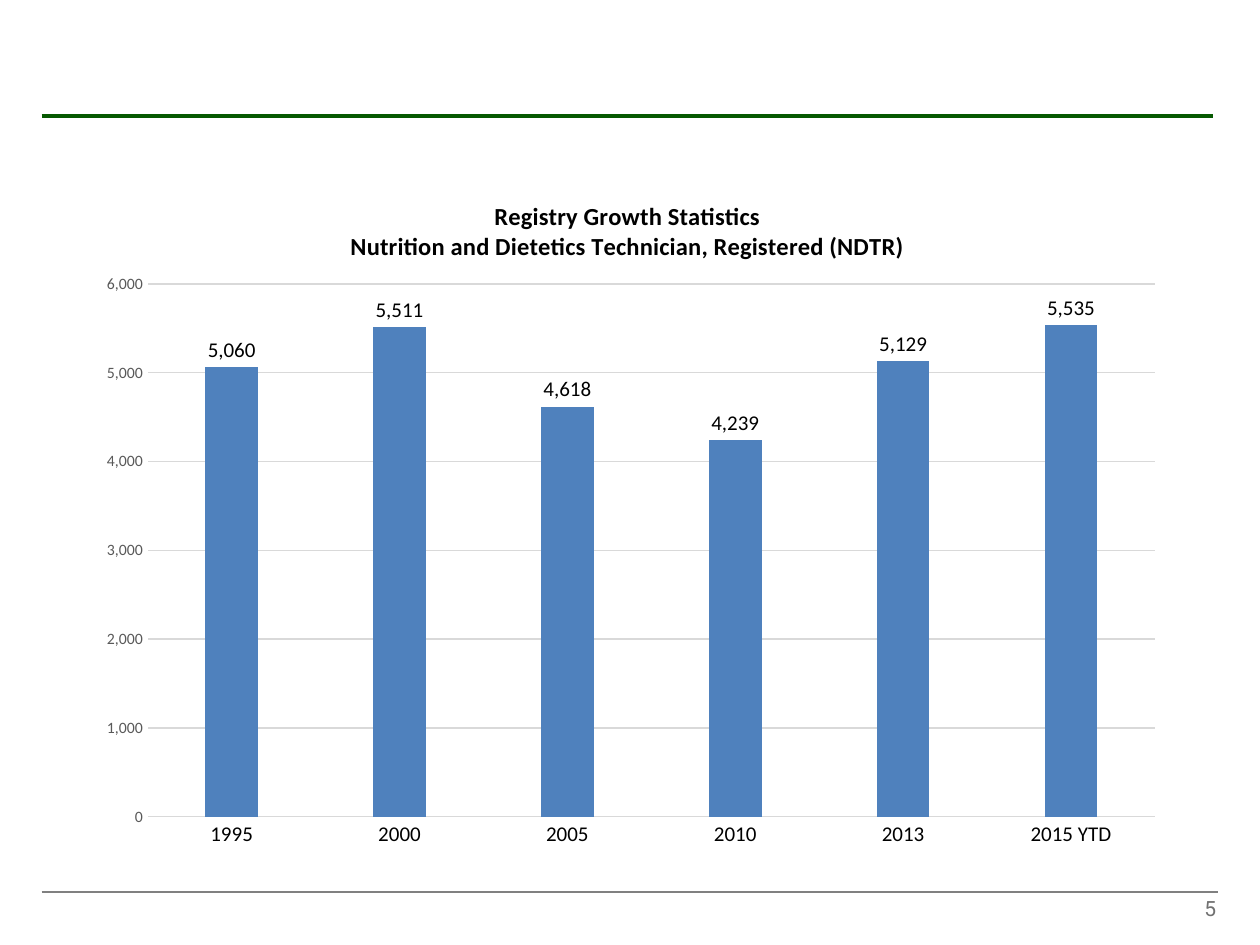
from lxml import etree
from pptx import Presentation
from pptx.chart.data import CategoryChartData
from pptx.dml.color import RGBColor
from pptx.enum.chart import XL_CHART_TYPE, XL_LABEL_POSITION, XL_TICK_MARK
from pptx.enum.shapes import MSO_CONNECTOR
from pptx.enum.text import MSO_ANCHOR, PP_ALIGN
from pptx.oxml.ns import qn
from pptx.util import Inches, Pt

COLUMNS = XL_CHART_TYPE.COLUMN_CLUSTERED
OUTSIDE_END = XL_LABEL_POSITION.OUTSIDE_END
NO_TICK = XL_TICK_MARK.NONE
STRAIGHT = MSO_CONNECTOR.STRAIGHT
MIDDLE = MSO_ANCHOR.MIDDLE
RIGHT = PP_ALIGN.RIGHT

HEADING = ["Registry Growth Statistics",
           "Nutrition and Dietetics Technician, Registered (NDTR)"]
REGISTRY = {"1995": 5060, "2000": 5511, "2005": 4618,
            "2010": 4239, "2013": 5129, "2015 YTD": 5535}


def color(hex_value):
    return RGBColor.from_string(hex_value)


def set_font(font, size, hex_value, name="Calibri", bold=False):
    font.name = name
    font.size = Pt(size)
    font.bold = bold
    font.color.rgb = color(hex_value)


def set_line(line, hex_value, width):
    line.color.rgb = color(hex_value)
    line.width = Pt(width)


def add_rule(slide, left, top, width, hex_value, weight):
    rule = slide.shapes.add_connector(
        STRAIGHT, Inches(left), Inches(top), Inches(left + width), Inches(top))
    set_line(rule.line, hex_value, weight)
    etree.SubElement(rule._element.spPr, qn("a:effectLst"))


def add_page_number(slide, left, top, width, height, number):
    box = slide.shapes.add_textbox(
        Inches(left), Inches(top), Inches(width), Inches(height))
    frame = box.text_frame
    frame.word_wrap = True
    frame.vertical_anchor = MIDDLE
    paragraph = frame.paragraphs[0]
    paragraph.text = number
    paragraph.alignment = RIGHT
    set_font(paragraph.font, 12, "717171", "Roboto")


def set_layout(parent, position, **settings):
    for old in parent.findall(qn("c:layout")):
        parent.remove(old)
    layout = etree.Element(qn("c:layout"))
    manual = etree.SubElement(layout, qn("c:manualLayout"))
    for tag, value in settings.items():
        etree.SubElement(manual, qn(f"c:{tag}")).set("val", str(value))
    parent.insert(position, layout)


def add_heading(chart):
    chart.has_title = True
    frame = chart.chart_title.text_frame
    frame.text = "\n".join(HEADING)
    for paragraph in frame.paragraphs:
        set_font(paragraph.font, 14, "000000", bold=True)
    set_layout(chart.chart_title._element, 1,
               xMode="edge", yMode="edge", x=0.24, y=0.04)


def format_axes(chart):
    years = chart.category_axis
    years.major_tick_mark = NO_TICK
    set_font(years.tick_labels.font, 12, "000000")
    set_line(years.format.line, "D9D9D9", 0.75)

    counts = chart.value_axis
    counts.minimum_scale, counts.maximum_scale = 0, 6000
    counts.major_unit = 1000
    counts.major_tick_mark = NO_TICK
    counts.format.line.fill.background()
    set_line(counts.major_gridlines.format.line, "D9D9D9", 0.75)
    set_font(counts.tick_labels.font, 9, "595959")
    counts.tick_labels.number_format = "#,##0"
    counts.tick_labels.number_format_is_linked = False


def format_columns(plot):
    plot.gap_width = 219
    plot.overlap = -27
    plot.vary_by_categories = False
    columns = plot.series[0]
    columns.format.fill.solid()
    columns.format.fill.fore_color.rgb = color("4F81BD")
    labels = columns.data_labels
    labels.show_value = True
    labels.position = OUTSIDE_END
    labels.number_format = "#,##0"
    labels.number_format_is_linked = False
    set_font(labels.font, 12, "000000")


def add_registry_chart(slide, left, top, width, height):
    data = CategoryChartData(number_format="#,##0")
    data.categories = REGISTRY.keys()
    data.add_series("Series 1", REGISTRY.values())
    chart = slide.shapes.add_chart(
        COLUMNS, Inches(left), Inches(top), Inches(width), Inches(height),
        data).chart
    set_font(chart.font, 10, "000000")
    chart.has_legend = False
    add_heading(chart)
    format_axes(chart)
    format_columns(chart.plots[0])
    plot_area = chart._chartSpace.find(".//" + qn("c:plotArea"))
    set_layout(plot_area, 0, layoutTarget="inner", xMode="edge",
               yMode="edge", x=0.058, y=0.168, w=0.922, h=0.769)


def main():
    presentation = Presentation()
    presentation.slide_width = Inches(10)
    presentation.slide_height = Inches(7.5)
    slide = presentation.slides.add_slide(presentation.slide_layouts[6])
    add_rule(slide, 0.33, 7.08, 9.34, "808080", 1)
    add_rule(slide, 0.33, 0.92, 9.3, "065901", 2.25)
    add_page_number(slide, 7.42, 7.08, 2.33, 0.25, "5")
    add_registry_chart(slide, 0.67, 1.33, 8.67, 5.5)
    presentation.save("out.pptx")


if __name__ == "__main__":
    main()
